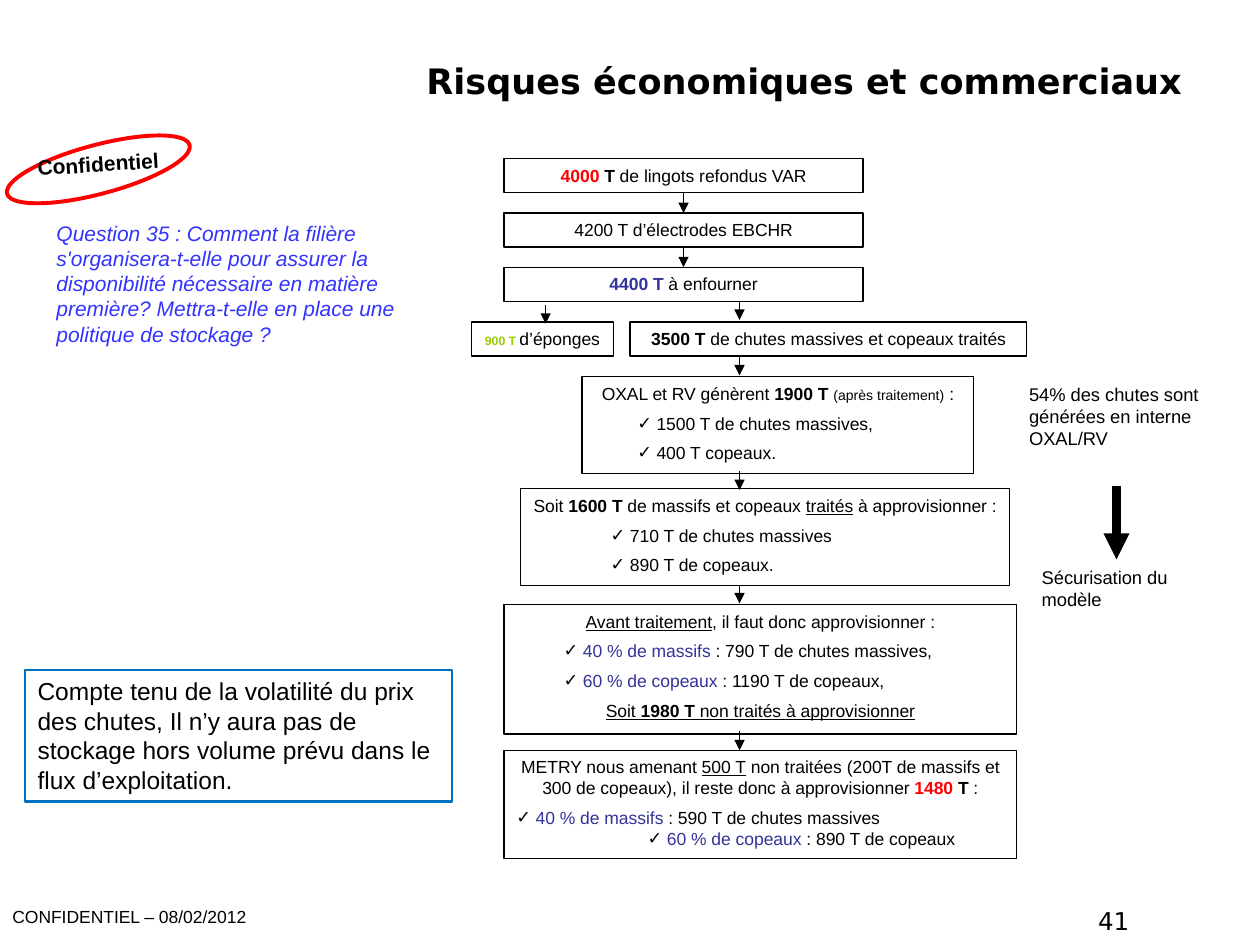
from lxml.etree import SubElement
from pptx import Presentation
from pptx.dml.color import RGBColor
from pptx.enum.shapes import MSO_CONNECTOR as Connector, MSO_SHAPE as Shape
from pptx.enum.text import MSO_ANCHOR as Anchor, PP_ALIGN as Align
from pptx.oxml.ns import qn
from pptx.util import Pt

COLORS = {
    "black": "000000", "white": "FFFFFF", "red": "FF0000", "question": "3333FF",
    "frame": "0070C0", "indigo": "333399", "lime": "99CC00",
}
BOLD = {"bold": True}
UNDERLINE = {"underline": True}
INDIGO = {"color": "indigo"}
BOLD_RED = {"bold": True, "color": "red"}
BOLD_INDIGO = {"bold": True, "color": "indigo"}
BULLET_HANG = 11


def color(name):
    return RGBColor.from_string(COLORS[name])


def format_font(font, values):
    values = {"name": "Arial", "size": 10, "color": "black", **values}
    font.color.rgb = color(values.pop("color"))
    values["size"] = Pt(values["size"])
    for name, value in values.items():
        setattr(font, name, value)


def add_check_bullet(paragraph, indent):
    properties = paragraph._p.get_or_add_pPr()
    properties.set("marL", str(Pt(indent)))
    properties.set("indent", str(-Pt(BULLET_HANG)))
    bullet_color = SubElement(properties, qn("a:buClr"))
    SubElement(bullet_color, qn("a:srgbClr")).set("val", COLORS["black"])
    SubElement(properties, qn("a:buFont")).set("typeface", "DejaVu Sans")
    SubElement(properties, qn("a:buChar")).set("char", "✓")


def write_paragraph(paragraph, runs, align=Align.LEFT, before=0, bullet=None, **base):
    paragraph.alignment = align
    paragraph.space_before = Pt(before)
    if bullet is not None:
        add_check_bullet(paragraph, bullet)
    for text, values in runs:
        run = paragraph.add_run()
        run.text = text
        format_font(run.font, {**base, **values})


def add_text(slide, place, text, align=Align.LEFT, wrap=True, rotation=0, **base):
    box = slide.shapes.add_textbox(*map(Pt, place))
    box.rotation = rotation
    box.text_frame.word_wrap = wrap
    write_paragraph(box.text_frame.paragraphs[0], [(text, {})], align, **base)


def add_outline(slide, kind, place, line_color, line_width):
    shape = slide.shapes.add_shape(kind, *map(Pt, place))
    shape.shadow.inherit = False
    shape.fill.background()
    shape.line.color.rgb = color(line_color)
    shape.line.width = Pt(line_width)
    return shape


def add_box(slide, place, paragraphs, line_color="black", line_width=0.75):
    box = add_outline(slide, Shape.RECTANGLE, place, line_color, line_width)
    frame = box.text_frame
    frame.word_wrap = True
    frame.vertical_anchor = Anchor.TOP
    for index, (runs, values) in enumerate(paragraphs):
        paragraph = frame.add_paragraph() if index else frame.paragraphs[0]
        before = 5 if index else 0
        write_paragraph(paragraph, runs, **{"before": before, **values})
    return box


def add_arrow(slide, x, top, bottom, width=0.75):
    arrow = slide.shapes.add_connector(
        Connector.STRAIGHT, Pt(x), Pt(top), Pt(x), Pt(bottom))
    arrow.line.color.rgb = color("black")
    arrow.line.width = Pt(width)
    SubElement(arrow.line._get_or_add_ln(), qn("a:tailEnd")).set("type", "triangle")
    SubElement(arrow._element.spPr, qn("a:effectLst"))
    return arrow


def join_boxes(slide, upper, lower):
    arrow = add_arrow(slide, 0, 0, 0)
    arrow.begin_connect(upper, 2)
    arrow.end_connect(lower, 0)


def centered(*runs):
    return runs, {"align": Align.CENTER}


def checked(indent, *runs, **values):
    return runs, {"bullet": indent, **values}


def add_title(slide, text):
    title = slide.shapes.title
    title.left, title.top, title.width, title.height = map(Pt, (212.4, 26, 494.6, 40.3))
    title.text_frame.vertical_anchor = Anchor.MIDDLE
    write_paragraph(title.text_frame.paragraphs[0], [(text, {})], Align.CENTER,
                    name="DejaVu Sans", size=20, bold=True)


def add_stamp(slide):
    ellipse = add_outline(slide, Shape.OVAL, (2.2, 82.8, 108, 28), "red", 2.25)
    ellipse.rotation = 345.1
    ellipse.fill.solid()
    ellipse.fill.fore_color.rgb = color("white")
    add_text(slide, (6.2, 82.8, 100, 26.6), "Confidentiel", Align.CENTER,
             rotation=356.3, size=12, bold=True)


def add_flow(slide):
    totals = [
        centered(("4000", BOLD_RED), (" T", BOLD), (" de lingots refondus VAR", {})),
        centered(("4200 T d’électrodes EBCHR", {})),
        centered(("4400 T", BOLD_INDIGO), (" à enfourner", {})),
    ]
    boxes = [add_box(slide, (288, 90.7 + 31 * row, 205.2, 19.5), [content])
             for row, content in enumerate(totals)]
    for upper, lower in zip(boxes, boxes[1:]):
        join_boxes(slide, upper, lower)

    details = [
        ((269.3, 184, 81.4, 19.5), [
            centered(("900 T ", {"size": 7, "bold": True, "color": "lime"}),
                     ("d’éponges", {}))]),
        ((360, 184, 226.8, 19.5), [
            centered(("3500 T", BOLD), (" de chutes massives et copeaux traités", {}))]),
        ((332.6, 215.2, 223.9, 55.5), [
            centered(("OXAL et RV génèrent ", {}), ("1900 T ", BOLD),
                     ("(après traitement)", {"size": 8}), (" :", {})),
            checked(35.5, ("1500 T de chutes massives,", {})),
            checked(35.5, ("400 T copeaux.", {}))]),
        ((297.4, 279.2, 279.6, 55.5), [
            centered(("Soit ", {}), ("1600 T", BOLD), (" de massifs et copeaux ", {}),
                     ("traités", UNDERLINE), (" à approvisionner :", {})),
            checked(55.5, ("710 T de chutes massives", {})),
            checked(55.5, ("890 T de copeaux.", {}))]),
        ((288, 345.4, 293, 74), [
            centered(("Avant traitement", UNDERLINE),
                     (", il faut donc approvisionner :", {})),
            checked(38, ("40 % de massifs ", INDIGO), (": 790 T de chutes massives,", {})),
            checked(38, ("60 % de copeaux", INDIGO), (" : 1190 T de copeaux,", {})),
            centered(("Soit ", UNDERLINE), ("1980 T", {**BOLD, **UNDERLINE}),
                     (" non traités à approvisionner", UNDERLINE))]),
        ((288, 428.7, 293, 62), [
            centered(("METRY nous amenant ", {}), ("500 T", UNDERLINE),
                     (" non traitées (200T de massifs et 300 de copeaux), "
                      "il reste donc à approvisionner ", {}),
                     ("1480", BOLD_RED), (" T", BOLD), (" :", {})),
            checked(11, ("40 % de massifs ", INDIGO), (": 590 T de chutes massives", {})),
            checked(86, ("60 % de copeaux", INDIGO), (" : 890 T de copeaux", {}),
                    before=0)]),
    ]
    for place, paragraphs in details:
        add_box(slide, place, paragraphs)

    add_arrow(slide, 311.8, 174.2, 185)
    for top in (172.1, 203.8, 269.3, 334.1, 418):
        add_arrow(slide, 422.6, top, top + 10.7)


def add_conclusion(slide):
    add_text(slide, (581, 215.3, 118.8, 45.4),
             "54% des chutes sont générées en interne OXAL/RV", size=10.5)
    add_arrow(slide, 638, 278, 319.7, 5)
    add_text(slide, (588.2, 319.7, 106.6, 21), "Sécurisation du modèle", size=10.5)


def main():
    presentation = Presentation()
    presentation.slide_width, presentation.slide_height = Pt(720), Pt(540)
    slide = presentation.slides.add_slide(presentation.slide_layouts[5])
    add_title(slide, "Risques économiques et commerciaux")
    add_stamp(slide)
    add_text(slide, (25.2, 122.4, 232.6, 80),
             "Question 35 : Comment la filière s'organisera-t-elle pour assurer la "
             "disponibilité nécessaire en matière première? Mettra-t-elle en place une "
             "politique de stockage ?", size=12, italic=True, color="question")
    add_box(slide, (14.4, 383, 244, 75), [
        ([("Compte tenu de la volatilité du prix des chutes, Il n’y aura pas de stockage "
           "hors volume prévu dans le flux d’exploitation.", {})], {"size": 14})],
        "frame", 1.5)
    add_flow(slide)
    add_conclusion(slide)
    add_text(slide, (0, 514, 342.7, 19.4), "CONFIDENTIEL – 08/02/2012")
    add_text(slide, (484.6, 514, 167.8, 37.4), "41", Align.RIGHT,
             name="DejaVu Sans", size=14)
    presentation.save("out.pptx")


if __name__ == "__main__":
    main()
